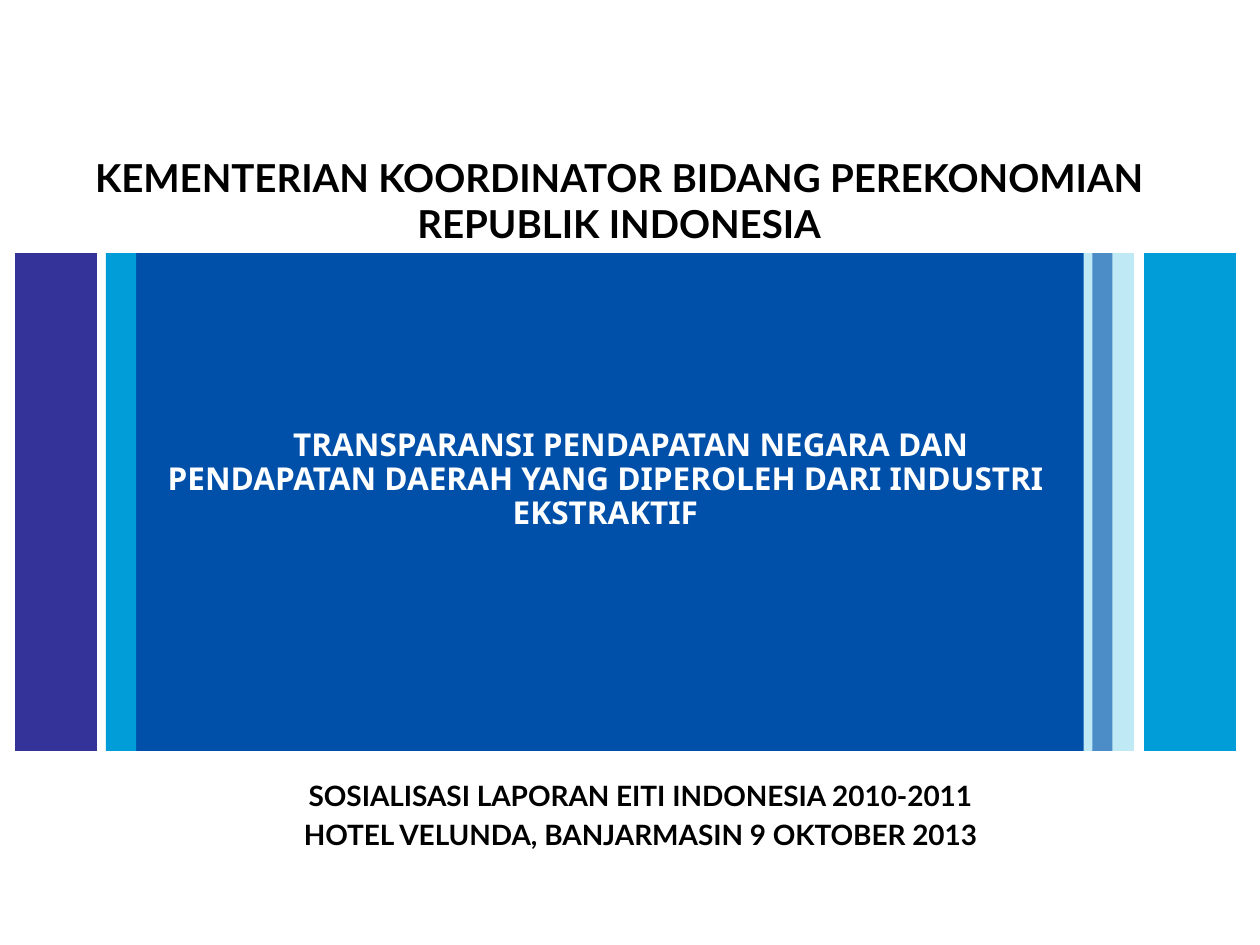
"""Build the cover slide of a talk on revenue from extractive industries."""
from lxml.etree import SubElement
from pptx import Presentation
from pptx.dml.color import RGBColor
from pptx.enum.shapes import MSO_SHAPE
from pptx.enum.text import MSO_ANCHOR, MSO_AUTO_SIZE, PP_ALIGN
from pptx.oxml.ns import qn
from pptx.util import Inches, Pt

THEME = {
    "pale": RGBColor.from_string("BFE9F5"),
    "blue": RGBColor.from_string("0050AA"),
    "cyan": RGBColor.from_string("009DD9"),
    "navy": RGBColor.from_string("333399"),
    "white": RGBColor.from_string("FFFFFF"),
    "black": RGBColor.from_string("000000"),
    "head": Pt(22),
    "topic": Pt(18),
    "event": Pt(16),
}


def place(shape, box):
    for name, value in zip(("left", "top", "width", "height"), box):
        setattr(shape, name, Inches(value))


def write(shape, lines, font, layout):
    frame = shape.text_frame
    form = {"word_wrap": True, "auto_size": MSO_AUTO_SIZE.NONE,
            "vertical_anchor": MSO_ANCHOR.MIDDLE}
    for name, value in form.items():
        setattr(frame, name, value)
    frame.text = "\n".join(lines)
    for para in frame.paragraphs:
        for name, value in layout.items():
            setattr(para, name, value)
        face = para.runs[0].font
        face.color.rgb = font["color"]
        for name in ("name", "size", "bold"):
            setattr(face, name, font[name])


deck = Presentation()
deck.slide_width, deck.slide_height = Inches(10), Inches(7.5)
slide = deck.slides.add_slide(deck.slide_layouts[5])

bands = [
    (8.03, 0.97, "pale", 100),
    (1.01, 7.59, "blue", 100),
    (8.67, 0.16, "blue", 60),
    (0.84, 0.24, "cyan", 100),
    (0.12, 0.65, "navy", 100),
    (9.08, 0.73, "cyan", 100),
]
group = slide.shapes.add_group_shape()
for left, width, tone, alpha in bands:
    band = group.shapes.add_shape(
        MSO_SHAPE.RECTANGLE, Inches(left), Inches(2.01), Inches(width), Inches(3.95))
    band.shadow.inherit = False
    band.fill.solid()
    band.fill.fore_color.rgb = THEME[tone]
    band.line.fill.background()
    if alpha < 100:
        color = band.fill._xPr.find(qn("a:solidFill"))[0]
        SubElement(color, qn("a:alpha")).set("val", str(alpha * 1000))

title = slide.shapes.title
place(title, (0.33, 1.17, 9.17, 0.84))
write(title, ["KEMENTERIAN KOORDINATOR BIDANG PEREKONOMIAN", "REPUBLIK INDONESIA"],
      {"name": "Lato", "size": THEME["head"], "bold": True, "color": THEME["black"]},
      {"alignment": PP_ALIGN.CENTER})

topic = slide.shapes.add_textbox(0, 0, 0, 0)
place(topic, (1.01, 2.96, 7.59, 1.7))
write(topic, ["TRANSPARANSI PENDAPATAN NEGARA DAN PENDAPATAN DAERAH "
              "YANG DIPEROLEH DARI INDUSTRI EKSTRAKTIF"],
      {"name": "Noto Sans", "size": THEME["topic"], "bold": True, "color": THEME["white"]},
      {"alignment": PP_ALIGN.CENTER, "line_spacing": 0.9})
topic.text_frame.paragraphs[0]._p.get_or_add_pPr().set("indent", str(Inches(0.4)))

event = slide.shapes.add_textbox(0, 0, 0, 0)
place(event, (0.5, 6.13, 9.17, 0.67))
write(event, ["SOSIALISASI LAPORAN EITI INDONESIA 2010-2011",
              "HOTEL VELUNDA, BANJARMASIN 9 OKTOBER 2013"],
      {"name": "Lato", "size": THEME["event"], "bold": True, "color": THEME["black"]},
      {"alignment": PP_ALIGN.CENTER, "space_after": Pt(3.2)})
event.text_frame.vertical_anchor = MSO_ANCHOR.TOP

deck.save("out.pptx")
